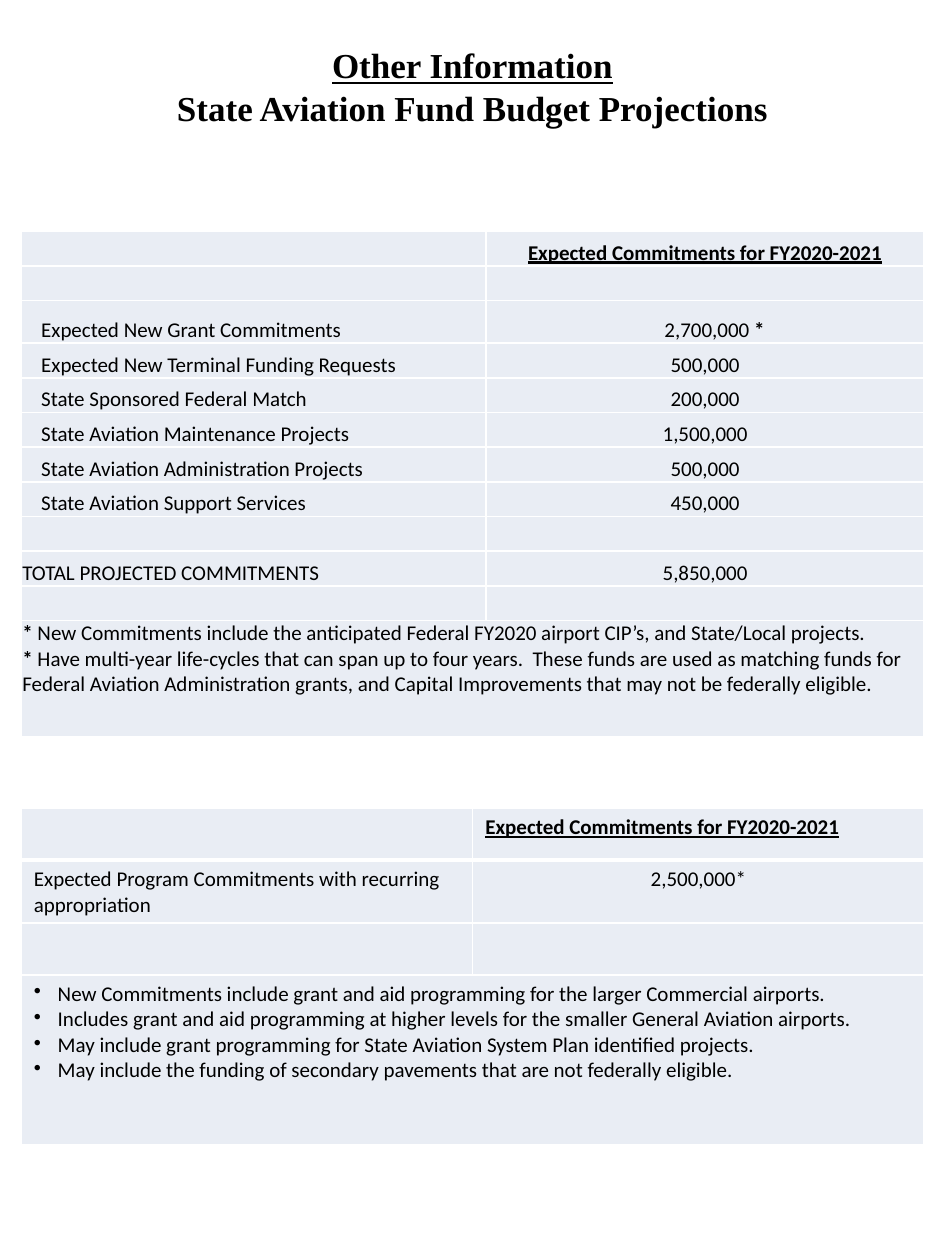
from lxml import etree
from pptx import Presentation
from pptx.dml.color import RGBColor
from pptx.enum.text import MSO_ANCHOR, PP_ALIGN
from pptx.oxml.ns import qn
from pptx.util import Cm, Pt

BLACK = RGBColor(0x00, 0x00, 0x00)
WHITE = RGBColor(0xFF, 0xFF, 0xFF)
PALE_BLUE = RGBColor(0xE9, 0xED, 0xF4)
LEFT, CENTER = PP_ALIGN.LEFT, PP_ALIGN.CENTER
MIDDLE, BOTTOM, TOP = MSO_ANCHOR.MIDDLE, MSO_ANCHOR.BOTTOM, MSO_ANCHOR.TOP

COLUMN_HEADING = "Expected Commitments for FY2020-2021"
COMMITMENTS = [
    ("Expected New Grant Commitments", "2,700,000 "),
    ("Expected New Terminal Funding Requests", "500,000"),
    ("State Sponsored Federal Match", "200,000"),
    ("State Aviation Maintenance Projects", "1,500,000"),
    ("State Aviation Administration Projects", "500,000"),
    ("State Aviation Support Services", "450,000"),
]
FOOTNOTES = [
    " New Commitments include the anticipated Federal FY2020 airport CIP’s, "
    "and State/Local projects.",
    " Have multi-year life-cycles that can span up to four years.  These funds "
    "are used as matching funds for Federal Aviation Administration grants, "
    "and Capital Improvements that may not be federally eligible.",
]
PROGRAM_NOTES = [
    "New Commitments include grant and aid programming for the larger "
    "Commercial airports.",
    "Includes grant and aid programming at higher levels for the smaller "
    "General Aviation airports.",
    "May include grant programming for State Aviation System Plan identified "
    "projects.",
    "May include the funding of secondary pavements that are not federally "
    "eligible.",
]


def style_font(font, name, size, bold=False, underline=False):
    """Set the black typeface of a paragraph or run."""
    font.name, font.size = name, Pt(size)
    font.bold, font.underline = bold, underline
    font.color.rgb = BLACK


def write_line(paragraph, text, align=LEFT, heading=False, indent=0):
    """Fill one table paragraph."""
    style_font(paragraph.font, "Calibri", 12, heading, heading)
    paragraph.alignment = align
    if indent:
        paragraph._p.get_or_add_pPr().set("marL", str(Cm(indent)))
    if text:
        paragraph.add_run().text = text


def add_star(paragraph):
    """Append a bold footnote mark."""
    star = paragraph.add_run()
    star.text = "*"
    star.font.bold = True


def add_bullet(paragraph, indent):
    """Give a paragraph a hanging round bullet."""
    properties = paragraph._p.get_or_add_pPr()
    properties.set("marL", str(Cm(indent)))
    properties.set("indent", str(-Cm(indent)))
    bullet = etree.Element(qn("a:buChar"), char="•")
    properties.insert(0, bullet)


def add_paragraphs(cell, count):
    """Return the given number of paragraphs of a cell."""
    frame = cell.text_frame
    return [frame.paragraphs[0]] + [frame.add_paragraph() for _ in range(count - 1)]


def add_border(cell, side, width):
    """Draw a white rule on one side of a cell."""
    line = etree.SubElement(
        cell._tc.get_or_add_tcPr(), qn("a:" + side), w=str(Pt(width)))
    fill = etree.SubElement(line, qn("a:solidFill"))
    etree.SubElement(fill, qn("a:srgbClr"), val=str(WHITE))


def add_pale_table(slide, left, top, widths, heights, heading_rule=1):
    """Add an empty pale table with white rules and a merged last row."""
    table = slide.shapes.add_table(
        len(heights), len(widths), Cm(left), Cm(top),
        Cm(sum(widths)), Cm(sum(heights))).table
    table.first_row = table.horz_banding = False
    for column, width in zip(table.columns, widths):
        column.width = Cm(width)
    for index, (row, height) in enumerate(zip(table.rows, heights)):
        row.height = Cm(height)
        for cell in row.cells:
            for side in ("lnL", "lnR", "lnT", "lnB"):
                thick = (index, side) in ((0, "lnB"), (1, "lnT"))
                add_border(cell, side, heading_rule if thick else 1)
            cell.fill.solid()
            cell.fill.fore_color.rgb = PALE_BLUE
            style_font(cell.text_frame.paragraphs[0].font, "Calibri", 12)
    last = len(heights) - 1
    table.cell(last, 0).merge(table.cell(last, len(widths) - 1))
    return table


def add_title(slide, left, top, width, height):
    """Add the two centred title lines."""
    frame = slide.shapes.add_textbox(
        Cm(left), Cm(top), Cm(width), Cm(height)).text_frame
    frame.word_wrap = True
    frame.vertical_anchor = MIDDLE
    frame.margin_bottom = Cm(0.9)
    heading, subject = frame.paragraphs[0], frame.add_paragraph()
    heading.text = "Other Information"
    subject.text = "State Aviation Fund Budget Projections"
    for line in (heading, subject):
        style_font(line.font, "Times New Roman", 20, True, line is heading)
        line.alignment = CENTER
        line.line_spacing = Pt(24.4)


def add_fund_table(slide, left, top, width):
    """Add the table of fund commitments with its total and footnotes."""
    label_width = 9.37
    heights = [0.7] * 2 + [0.86] + [0.7] * 8 + [2.34]
    table = add_pale_table(
        slide, left, top, [label_width, width - label_width], heights)
    for cell in table.iter_cells():
        cell.margin_left = cell.margin_right = Cm(0.02)
        cell.margin_top = cell.margin_bottom = 0
        cell.vertical_anchor = BOTTOM
    write_line(table.cell(0, 1).text_frame.paragraphs[0],
               COLUMN_HEADING, CENTER, heading=True)
    for row, (label, amount) in enumerate(COMMITMENTS, start=2):
        starred = row == 2
        amount_line = table.cell(row, 1).text_frame.paragraphs[0]
        write_line(table.cell(row, 0).text_frame.paragraphs[0], label, indent=0.38)
        write_line(amount_line, amount, CENTER, indent=0.38 if starred else 0)
        if starred:
            add_star(amount_line)
    write_line(table.cell(9, 0).text_frame.paragraphs[0],
               "TOTAL PROJECTED COMMITMENTS")
    write_line(table.cell(9, 1).text_frame.paragraphs[0], "5,850,000", CENTER)
    notes = table.cell(11, 0)
    notes.vertical_anchor = TOP
    for line, note in zip(add_paragraphs(notes, len(FOOTNOTES)), FOOTNOTES):
        add_star(line)
        write_line(line, note)


def add_program_table(slide, left, top, width):
    """Add the table of program commitments with its bulleted notes."""
    table = add_pale_table(
        slide, left, top, [width / 2] * 2, [1.04, 1.25, 1.04, 3.43], heading_rule=3)
    write_line(table.cell(0, 1).text_frame.paragraphs[0],
               COLUMN_HEADING, heading=True)
    write_line(table.cell(1, 0).text_frame.paragraphs[0],
               "Expected Program Commitments with recurring appropriation")
    write_line(table.cell(1, 1).text_frame.paragraphs[0], "2,500,000*", CENTER)
    lines = add_paragraphs(table.cell(3, 0), len(PROGRAM_NOTES))
    for line, note in zip(lines, PROGRAM_NOTES):
        write_line(line, note)
        add_bullet(line, 0.48)


def main():
    """Build and save the slide."""
    deck = Presentation()
    deck.slide_width, deck.slide_height = Cm(19.05), Cm(25.4)
    slide = deck.slides.add_slide(deck.slide_layouts[6])
    add_title(slide, 0.95, 0, 17.15, 4.23)
    add_fund_table(slide, 0.43, 4.66, 18.2)
    add_program_table(slide, 0.43, 16.3, 18.2)
    deck.save("out.pptx")


if __name__ == "__main__":
    main()
